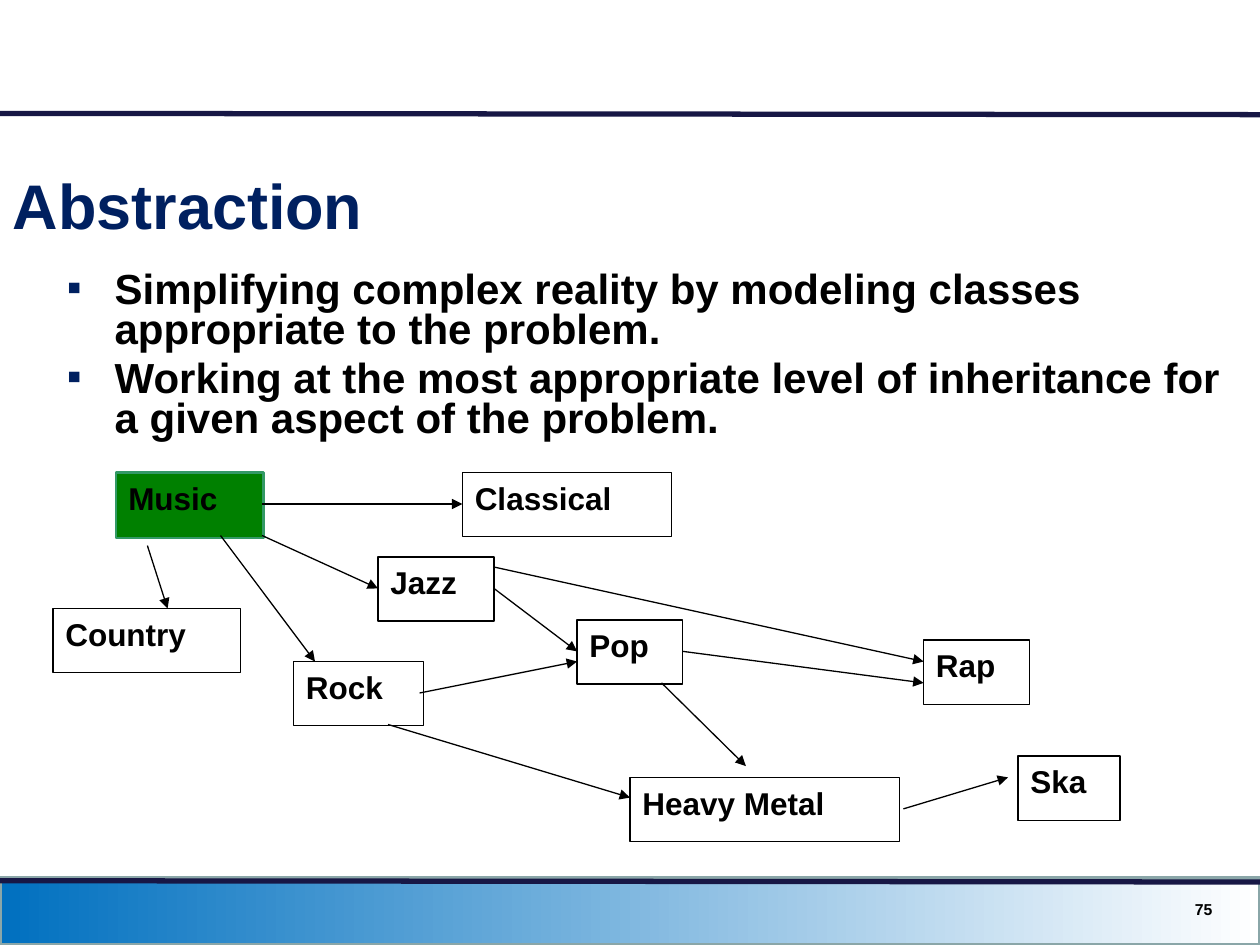
"""Builds the Abstraction slide: two bullets and a map of music genres."""
from lxml import etree
from pptx import Presentation
from pptx import util as u
from pptx.dml.color import RGBColor
from pptx.enum import shapes, text
from pptx.oxml.ns import qn

NAVY = RGBColor(0x00, 0x20, 0x60)
RULE = RGBColor(0x17, 0x17, 0x45)
BLUE = RGBColor(0x00, 0x70, 0xC0)
WHITE = RGBColor(0xFF, 0xFF, 0xFF)
BLACK = RGBColor(0x00, 0x00, 0x00)
GREY = RGBColor(0x8A, 0xA6, 0xA8)
GREEN = RGBColor(0x00, 0x80, 0x00)
SEA = RGBColor(0x33, 0x99, 0x66)

POINTS = [
    "Simplifying complex reality by modeling classes appropriate to the problem.",
    "Working at the most appropriate level of inheritance for a given aspect of the problem.",
]
GENRES = [
    ("Classical", 3.67, 3.75, 1.66),
    ("Jazz", 3, 4.42, 0.92),
    ("Rock", 2.33, 5.25, 1.03),
    ("Country", 0.42, 4.83, 1.49),
    ("Pop", 4.58, 4.92, 0.84),
    ("Rap", 7.33, 5.08, 0.84),
    ("Heavy Metal", 5, 6.17, 2.14),
    ("Ska", 8.08, 6, 0.81),
]
INFLUENCES = [
    (2.08, 4, 3.67, 4),
    (2.08, 4.25, 3, 4.67),
    (1.75, 4.25, 2.5, 5.25),
    (1.17, 4.33, 1.33, 4.83),
    (3.92, 4.67, 4.58, 5.17),
    (3.33, 5.5, 4.58, 5.25),
    (5.42, 5.17, 7.33, 5.42),
    (3.92, 4.5, 7.33, 5.25),
    (5.25, 5.42, 5.92, 6.08),
    (3.08, 5.75, 5, 6.33),
    (7.17, 6.42, 8, 6.17),
]


class Deck:
    """Holds the style and the current slide."""

    font = "Arial"

    def __init__(self):
        self.prs = Presentation()
        self.prs.slide_width, self.prs.slide_height = u.Inches(10), u.Inches(7.5)
        self.slide = self.prs.slides.add_slide(self.prs.slide_layouts[1])

    def place(self, holder, box):
        holder.left, holder.top, holder.width, holder.height = map(u.Inches, box)

    def set_text(self, frame, lines, size, color=BLACK, align=text.PP_ALIGN.LEFT,
                 anchor=text.MSO_ANCHOR.TOP):
        frame.text = "\n".join(lines)
        frame.word_wrap = True
        frame.auto_size = text.MSO_AUTO_SIZE.NONE
        frame.vertical_anchor = anchor
        for paragraph in frame.paragraphs:
            paragraph.alignment = align
            for run in paragraph.runs:
                run.font.name, run.font.size, run.font.bold = self.font, u.Pt(size), True
                run.font.color.rgb = color

    def title(self, words, box):
        heading = self.slide.shapes.title
        self.place(heading, box)
        self.set_text(heading.text_frame, [words], 36, NAVY, anchor=text.MSO_ANCHOR.MIDDLE)

    def bullets(self, lines, box):
        body = self.slide.placeholders[1]
        self.place(body, box)
        self.set_text(body.text_frame, lines, 24)
        for index, paragraph in enumerate(body.text_frame.paragraphs):
            paragraph.line_spacing = 0.8
            paragraph.space_before = u.Pt(4.8 if index else 0)
            props = paragraph._p.get_or_add_pPr()
            props.set("marL", str(u.Inches(0.38)))
            props.set("indent", str(-u.Inches(0.38)))
            tint = etree.SubElement(props, qn("a:buClr"))
            etree.SubElement(tint, qn("a:srgbClr"), val=str(NAVY))
            etree.SubElement(props, qn("a:buFont"), typeface=self.font)
            etree.SubElement(props, qn("a:buChar"), char="▪")

    def label(self, words, box, size):
        note = self.slide.shapes.add_textbox(*map(u.Inches, box))
        self.set_text(note.text_frame, [words], size, align=text.PP_ALIGN.RIGHT,
                      anchor=text.MSO_ANCHOR.MIDDLE)

    def rectangle(self, box, line, width):
        panel = self.slide.shapes.add_shape(
            shapes.MSO_SHAPE.RECTANGLE, *map(u.Inches, box))
        panel.shadow.inherit = False
        panel.line.color.rgb, panel.line.width = line, u.Pt(width)
        return panel

    def band(self, box):
        fill = self.rectangle(box, GREY, 2).fill
        fill.gradient()
        fill.gradient_angle = 0
        for stop, color, position in zip(fill.gradient_stops, (BLUE, WHITE), (0, 1)):
            stop.color.rgb, stop.position = color, position

    def genre(self, name, box, fill=None, line=BLACK, width=0.75):
        node = self.rectangle(box, line, width)
        if fill is None:
            node.fill.background()
        else:
            node.fill.solid()
            node.fill.fore_color.rgb = fill
        self.set_text(node.text_frame, [name], 18)

    def line(self, ends, color=BLACK, width=0.75, arrow=False):
        link = self.slide.shapes.add_connector(
            shapes.MSO_CONNECTOR.STRAIGHT, *map(u.Inches, ends))
        link.line.color.rgb, link.line.width = color, u.Pt(width)
        properties = link._element.spPr
        if arrow:
            etree.SubElement(properties.find(qn("a:ln")), qn("a:tailEnd"), type="triangle")
        etree.SubElement(properties, qn("a:effectLst"))


def main():
    deck = Deck()
    deck.band((0, 6.97, 10, 0.53))
    for start, end in ((6.99, 7), (0.9, 0.91)):
        deck.line((0, start, 10, end), RULE, 3)
    deck.title("Abstraction", (0, 1.14, 9.58, 0.97))
    deck.bullets(POINTS, (0.43, 2.11, 9.57, 4.59))
    deck.label("75", (7.39, 7.07, 2.33, 0.29), 9)
    deck.genre("Music", (0.92, 3.75, 1.17, 0.52), GREEN, SEA, 1.5)
    for name, left, top, width in GENRES:
        deck.genre(name, (left, top, width, 0.51))
    for ends in INFLUENCES:
        deck.line(ends, arrow=True)
    deck.prs.save("out.pptx")


if __name__ == "__main__":
    main()
